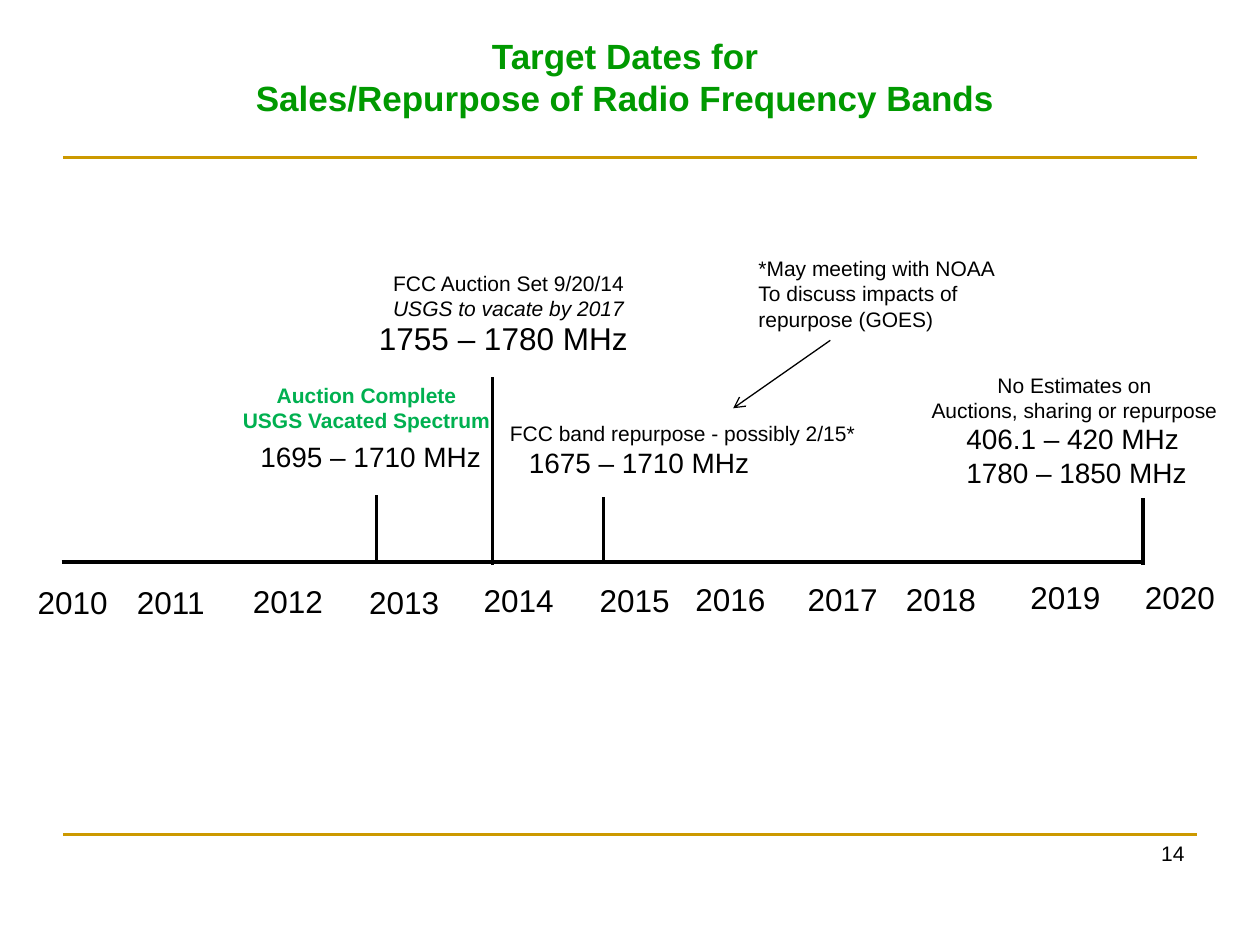
import pptx
import pptx.util
import pptx.dml.color
import pptx.enum.shapes
import pptx.enum.text
import pptx.oxml
import pptx.oxml.ns

Cm, Pt = pptx.util.Cm, pptx.util.Pt
ALIGN = pptx.enum.text.PP_ALIGN
ANCHOR = pptx.enum.text.MSO_ANCHOR

COLORS = {"title": "009900", "rule": "CC9900", "ink": "000000", "done": "00B050"}

# Content; all lengths in centimetres
TITLE = "Target Dates for \vSales/Repurpose of Radio Frequency Bands "
PAGE_NUMBER = "14"
RULE_HEIGHTS = [3.18, 16.82]

FIRST_YEAR = 2010
YEAR_PLACES = [  # left, top
    (0.51, 11.63), (2.51, 11.62), (4.85, 11.6), (7.19, 11.63),
    (9.5, 11.58), (11.84, 11.58), (13.77, 11.56), (16.03, 11.56),
    (18.01, 11.56), (20.52, 11.53), (22.83, 11.53),
]

AXIS = (1.24, 23.04, 11.33)  # start, end, height
TICKS = [  # x, top, bottom
    (7.59, 9.98, 11.33), (9.93, 7.59, 11.38),
    (12.17, 10.01, 11.36), (23.04, 10.03, 11.38),
]
MEETING_ARROW = (16.74, 6.86, 14.78, 8.23)

BANDS = [  # left, top, width, height, size, lines
    (5.0, 8.74, 5.18, 0.94, 16, ["1695 – 1710 MHz"]),
    (10.41, 8.86, 5.18, 0.94, 16, ["1675 – 1710 MHz"]),
    (19.23, 8.38, 5.18, 2.31, 16, ["406.1 – 420 MHz", "1780 – 1850 MHz"]),
    (7.39, 6.3, 5.56, 1.02, 18, ["1755 – 1780 MHz"]),
]
NOTES = [  # left, top, width, height, lines, options
    (18.19, 7.39, 7.06, 1.27,
     ["No Estimates on ", "Auctions, sharing or repurpose "], {"align": ALIGN.CENTER}),
    (4.01, 7.59, 6.76, 1.27,
     ["Auction Complete", "USGS Vacated Spectrum"],
     {"align": ALIGN.CENTER, "color": "done", "bold": True}),
    (10.03, 8.36, 8.46, 0.76, ["FCC band repurpose - possibly 2/15*"], {}),
    (7.65, 5.33, 5.21, 1.27,
     ["FCC Auction Set 9/20/14", "USGS to vacate by 2017"],
     {"align": ALIGN.CENTER, "italic_lines": [1]}),
    (15.04, 5.03, 5.92, 1.8,
     ["*May meeting with NOAA", "To discuss impacts of repurpose (GOES)"], {}),
]


def rgb(name):
    return pptx.dml.color.RGBColor.from_string(COLORS[name])


def style(para, size, color="ink", align=ALIGN.LEFT, bold=False, italic=False):
    para.alignment = align
    font = para.font
    font.name, font.size, font.bold, font.italic = "Arial", Pt(size), bold, italic
    font.color.rgb = rgb(color)


def add_text(page, left, top, width, height, lines, size,
             anchor=ANCHOR.TOP, italic_lines=(), **look):
    box = page.shapes.add_textbox(Cm(left), Cm(top), Cm(width), Cm(height))
    frame = box.text_frame
    frame.word_wrap = True
    frame.vertical_anchor = anchor
    frame.text = "\n".join(lines)
    for index, para in enumerate(frame.paragraphs):
        style(para, size, italic=index in italic_lines, **look)


def add_line(page, x1, y1, x2, y2, color="ink", width=2, arrow=False):
    line = page.shapes.add_connector(
        pptx.enum.shapes.MSO_CONNECTOR.STRAIGHT, Cm(x1), Cm(y1), Cm(x2), Cm(y2))
    line.line.color.rgb = rgb(color)
    line.line.width = Pt(width)
    if arrow:
        head = pptx.oxml.parse_xml(
            f'<a:tailEnd {pptx.oxml.ns.nsdecls("a")} type="arrow"/>')
        line.line._get_or_add_ln().append(head)
    line._element.spPr.append(
        pptx.oxml.parse_xml(f'<a:effectLst {pptx.oxml.ns.nsdecls("a")}/>'))


def main():
    deck = pptx.Presentation()
    deck.slide_width, deck.slide_height = Cm(25.4), Cm(19.05)
    page = deck.slides.add_slide(deck.slide_layouts[5])

    # Title, rules and page number
    title = page.shapes.title
    title.left, title.top, title.width, title.height = Cm(1.27), Cm(0.76), Cm(22.86), Cm(1.57)
    title.text_frame.text = TITLE
    title.text_frame.auto_size = pptx.enum.text.MSO_AUTO_SIZE.NONE
    title.text_frame.vertical_anchor = ANCHOR.MIDDLE
    style(title.text_frame.paragraphs[0], 20, "title", ALIGN.CENTER, bold=True)
    for height in RULE_HEIGHTS:
        add_line(page, 1.27, height, 24.13, height, "rule", 1.5)
    add_text(page, 18.21, 16.31, 5.92, 1.27, [PAGE_NUMBER], 12,
             anchor=ANCHOR.BOTTOM, align=ALIGN.RIGHT)

    # Timeline
    start, end, level = AXIS
    add_line(page, start, level, end, level)
    for x, top, bottom in TICKS:
        add_line(page, x, bottom, x, top)
    for year, (left, top) in enumerate(YEAR_PLACES, FIRST_YEAR):
        add_text(page, left, top, 2.34, 1.02, [str(year)], 18)

    # Frequency bands and their notes
    for left, top, width, height, size, lines in BANDS:
        add_text(page, left, top, width, height, lines, size)
    for left, top, width, height, lines, options in NOTES:
        add_text(page, left, top, width, height, lines, 12, **options)
    add_line(page, *MEETING_ARROW, width=0.75, arrow=True)

    deck.save("out.pptx")


if __name__ == "__main__":
    main()
